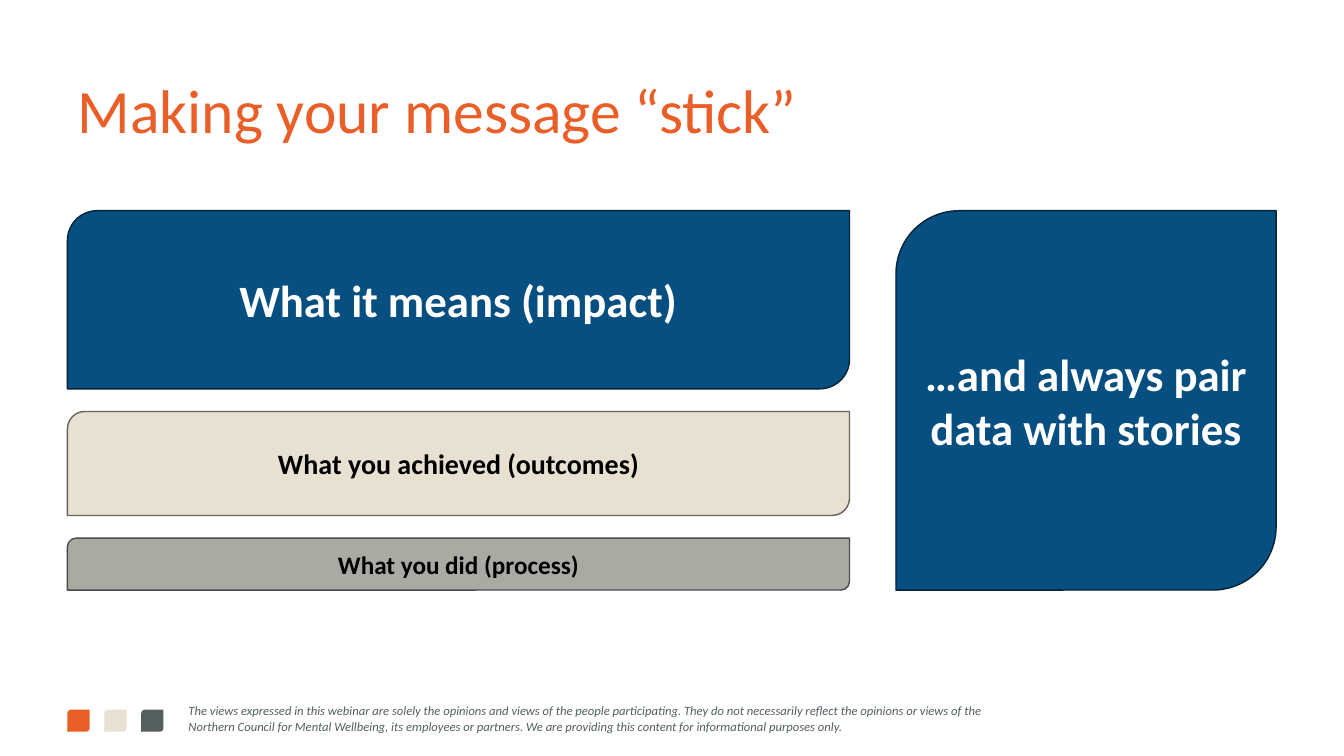
from pptx import Presentation
from pptx.dml.color import RGBColor
from pptx.enum.shapes import MSO_SHAPE
from pptx.enum.text import MSO_ANCHOR, PP_ALIGN
from pptx.util import Cm, Pt

ORANGE, SAND, SLATE = "EA5E28", "E8E0D1", "53605F"
NAVY, NAVY_EDGE = "064F80", "032338"
LEVELS = [
    ("What it means (impact)", 4.49, 32, NAVY, NAVY_EDGE, "FFFFFF"),
    ("What you achieved (outcomes)", 2.62, 20, SAND, "66625C", "000000"),
    ("What you did (process)", 1.31, 18, "A9ABA3", "4A4B47", "000000"),
]
DISCLAIMER = (
    "The views expressed in this webinar are solely the opinions and views of the people "
    "participating. They do not necessarily reflect the opinions or views of the\n"
    "Northern Council for Mental Wellbeing, its employees or partners. "
    "We are providing this content for informational purposes only."
)


def color(hex_code):
    return RGBColor.from_string(hex_code)


def write(frame, wording, size, ink, align=PP_ALIGN.LEFT, bold=False, italic=False):
    frame.word_wrap = True
    paragraph = frame.paragraphs[0]
    paragraph.text = wording
    paragraph.alignment = align
    for run in paragraph.runs:
        run.font.name = "Calibri"
        run.font.size = Pt(size)
        run.font.bold = bold
        run.font.italic = italic
        run.font.color.rgb = color(ink)
    return paragraph


def add_leaf(slide, left, top, width, height, fill, edge=None):
    leaf = slide.shapes.add_shape(
        MSO_SHAPE.ROUND_2_DIAG_RECTANGLE, Cm(left), Cm(top), Cm(width), Cm(height))
    leaf.shadow.inherit = False
    leaf.fill.solid()
    leaf.fill.fore_color.rgb = color(fill)
    if edge:
        leaf.line.color.rgb = color(edge)
        leaf.line.width = Pt(1)
    else:
        leaf.line.fill.background()
    return leaf


def add_message(slide, left, top, width, height, wording, size, fill, edge, ink):
    message = add_leaf(slide, left, top, width, height, fill, edge)
    message.text_frame.vertical_anchor = MSO_ANCHOR.MIDDLE
    write(message.text_frame, wording, size, ink, PP_ALIGN.CENTER, bold=True)


def add_heading(slide, left, top, width, height):
    heading = slide.shapes.title
    heading.left, heading.top = Cm(left), Cm(top)
    heading.width, heading.height = Cm(width), Cm(height)
    heading.text_frame.vertical_anchor = MSO_ANCHOR.MIDDLE
    write(heading.text_frame, "Making your message “stick”", 44, ORANGE).line_spacing = 0.9


def add_levels(slide, left, top, width, gap):
    for wording, height, size, fill, edge, ink in LEVELS:
        add_message(slide, left, top, width, height, wording, size, fill, edge, ink)
        top += height + gap


def add_footer(slide, left, top, width, height):
    for index, fill in enumerate((ORANGE, SAND, SLATE)):
        add_leaf(slide, left + index * 0.93, top + 0.28, 0.56, 0.56, fill)
    disclaimer = slide.shapes.add_textbox(
        Cm(left + 2.8), Cm(top), Cm(width - 2.8), Cm(height))
    write(disclaimer.text_frame, DISCLAIMER, 9, SLATE, italic=True)


def main():
    deck = Presentation()
    deck.slide_width, deck.slide_height = Cm(33.87), Cm(19.05)
    slide = deck.slides.add_slide(deck.slide_layouts[5])
    add_footer(slide, 1.7, 17.6, 25.35, 1.02)
    add_heading(slide, 1.7, 1.02, 30.45, 3.68)
    add_levels(slide, 1.7, 5.31, 19.71, 0.57)
    add_message(slide, 22.58, 5.31, 9.58, 9.56, "…and always pair data with stories",
                32, NAVY, NAVY_EDGE, "FFFFFF")
    deck.save("out.pptx")


if __name__ == "__main__":
    main()
